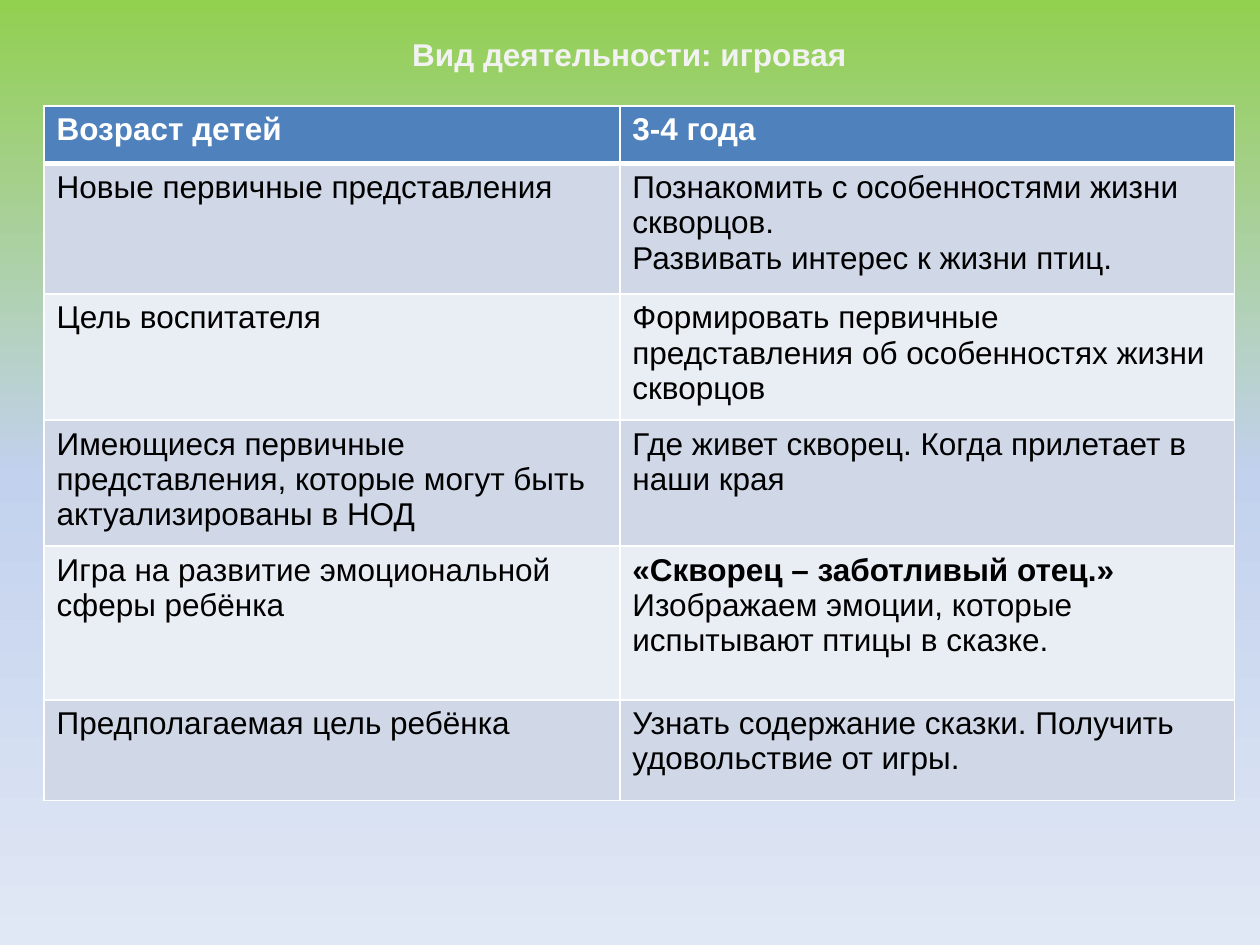
from copy import deepcopy

from lxml import etree
from pptx import Presentation
from pptx.dml.color import RGBColor
from pptx.enum.text import MSO_ANCHOR, MSO_AUTO_SIZE, PP_ALIGN
from pptx.oxml.ns import qn
from pptx.util import Pt

CENTER = PP_ALIGN.CENTER
MIDDLE = MSO_ANCHOR.MIDDLE
GROW = MSO_AUTO_SIZE.SHAPE_TO_FIT_TEXT
TITLE_ONLY = 5

COLORS = {
    "sky_top": "92D050", "sky_middle": "C2D1ED", "sky_bottom": "E1E8F5",
    "title": "F2F2F2", "header": "4F81BD", "odd": "D0D8E8", "even": "E9EDF4",
    "white": "FFFFFF", "text": "000000",
}
FONT, SIZE = "Arial", 18

COL_WIDTHS = [329, 351.4]
ROW_HEIGHTS = [33.1, 74.5, 68.2, 68.2, 87.8, 57.6]
# Each cell is a list of (text, bold) runs; "\v" breaks the line.
ROWS = [
    ([("Возраст детей", True)], [("3-4 года", True)]),
    ([("Новые первичные представления", False)],
     [("Познакомить с особенностями жизни скворцов.\vРазвивать интерес к жизни птиц.", False)]),
    ([("Цель воспитателя", False)],
     [("Формировать первичные представления об особенностях жизни скворцов", False)]),
    ([("Имеющиеся первичные представления, которые могут быть актуализированы в НОД", False)],
     [("Где живет скворец. Когда прилетает в наши края", False)]),
    ([("Игра на развитие эмоциональной сферы ребёнка", False)],
     [("«Скворец – заботливый отец.» ", True),
      ("Изображаем эмоции, которые испытывают птицы в сказке.", False)]),
    ([("Предполагаемая цель ребёнка", False)],
     [("Узнать содержание сказки. Получить удовольствие от игры.", False)]),
]


def rgb(name):
    return RGBColor.from_string(COLORS[name])


def set_font(font, color):
    font.name, font.size, font.color.rgb = FONT, Pt(SIZE), rgb(color)


def paint_background(slide):
    fill = slide.background.fill
    fill.gradient()
    fill.gradient_angle = 270
    stops = next(slide.element.iter(qn("a:gsLst")))
    stops.append(deepcopy(stops[-1]))
    names = ("sky_top", "sky_middle", "sky_bottom")
    for stop, position, name in zip(fill.gradient_stops, (0, 0.5, 1), names):
        stop.position, stop.color.rgb = position, rgb(name)


def add_title(slide, text, left, top, width, height):
    sp = slide.shapes.title
    sp.left, sp.top, sp.width, sp.height = map(Pt, (left, top, width, height))
    tf = sp.text_frame
    tf.text = text
    tf.word_wrap, tf.auto_size, tf.vertical_anchor = True, GROW, MIDDLE
    p = tf.paragraphs[0]
    p.alignment = CENTER
    set_font(p.font, "title")
    p.font.bold = True


def set_borders(cell, widths):
    """Draw white borders; widths holds points for the sides L, R, T and B."""
    tc_pr = cell._tc.get_or_add_tcPr()
    for side, width in zip("LRTB", widths):
        ln = etree.SubElement(tc_pr, qn(f"a:ln{side}"), w=str(Pt(width)))
        fill = etree.SubElement(ln, qn("a:solidFill"))
        etree.SubElement(fill, qn("a:srgbClr"), val=COLORS["white"])


def fill_cell(cell, runs, row):
    set_borders(cell, (1, 1, 3 if row == 1 else 1, 3 if row == 0 else 1))
    cell.fill.solid()
    cell.fill.fore_color.rgb = rgb("header" if row == 0 else "odd" if row % 2 else "even")
    p = cell.text_frame.paragraphs[0]
    set_font(p.font, "text" if row else "white")
    for text, bold in runs:
        for i, line in enumerate(text.split("\v")):
            if i:
                p.add_line_break()
            r = p.add_run()
            r.text, r.font.bold = line, bold


def add_activity_table(slide, left, top):
    frame = slide.shapes.add_table(len(ROWS), len(COL_WIDTHS), Pt(left), Pt(top),
                                   Pt(sum(COL_WIDTHS)), Pt(sum(ROW_HEIGHTS)))
    table = frame.table
    for column, width in zip(table.columns, COL_WIDTHS):
        column.width = Pt(width)
    for i, (height, cells) in enumerate(zip(ROW_HEIGHTS, ROWS)):
        table.rows[i].height = Pt(height)
        for j, runs in enumerate(cells):
            fill_cell(table.cell(i, j), runs, i)


def main():
    prs = Presentation()
    prs.slide_width, prs.slide_height = Pt(720), Pt(540)
    slide = prs.slides.add_slide(prs.slide_layouts[TITLE_ONLY])
    paint_background(slide)
    add_activity_table(slide, 25.2, 60.5)
    add_title(slide, "Вид деятельности: игровая", 25.2, 16.6, 668.9, 28.8)
    prs.save("out.pptx")


if __name__ == "__main__":
    main()
